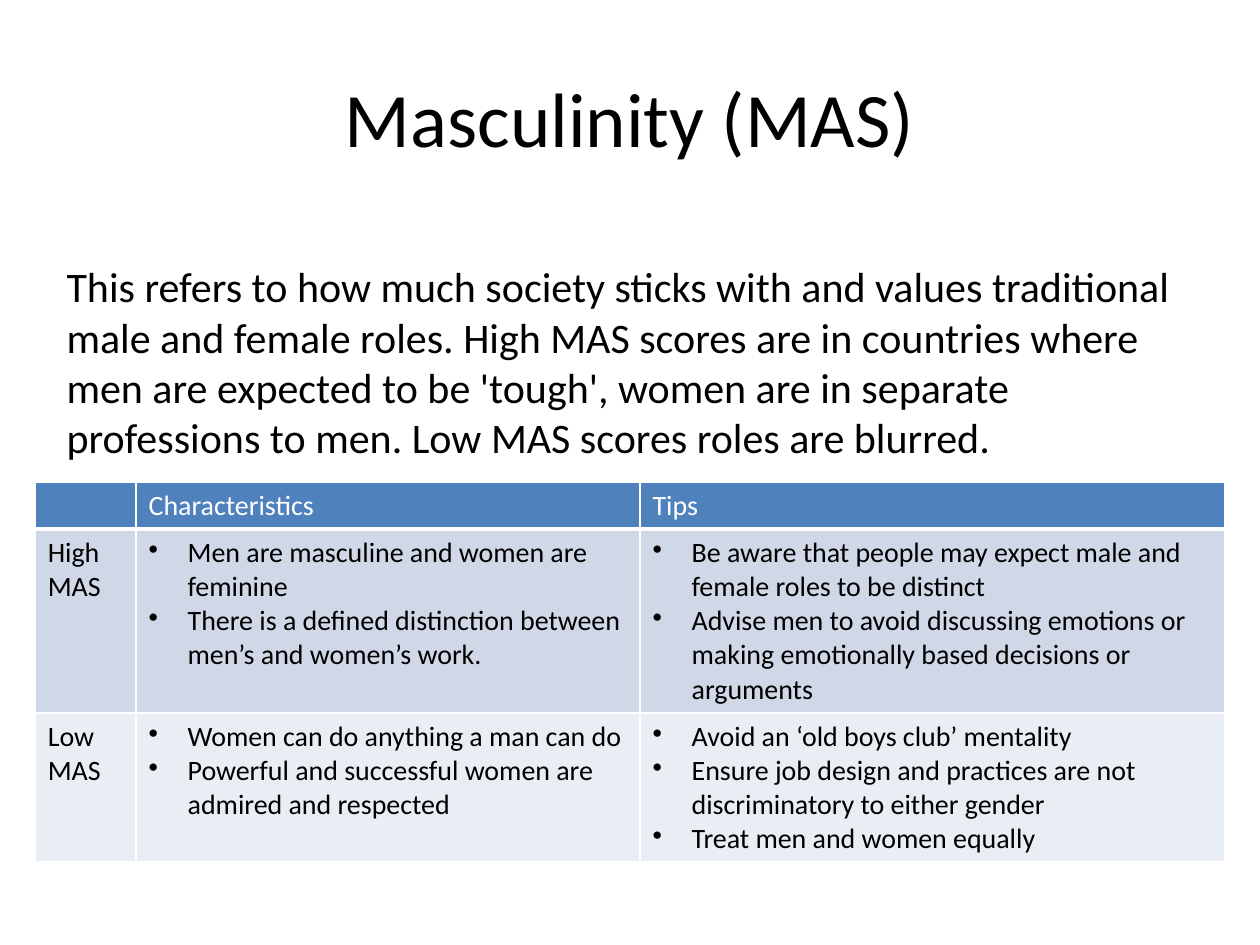
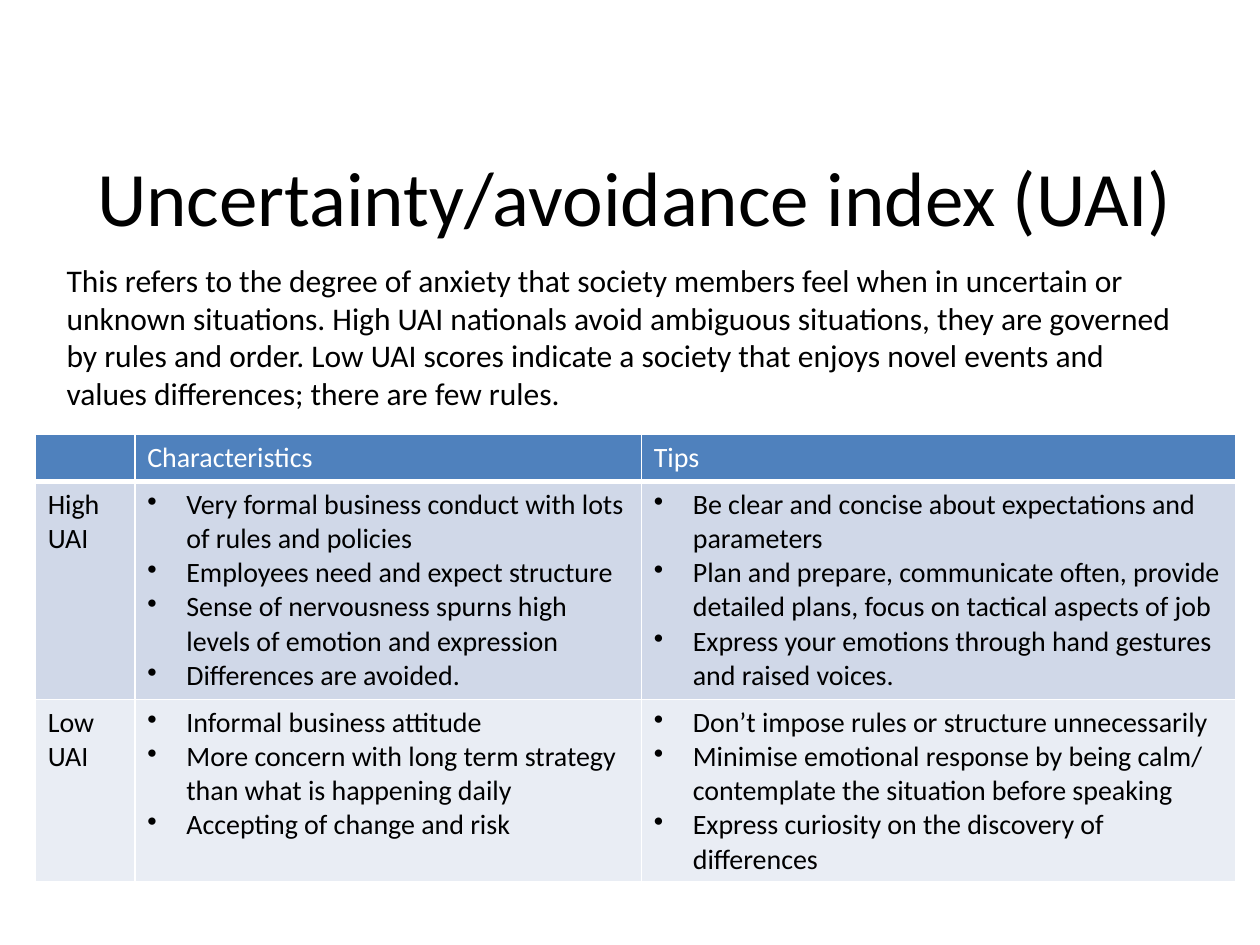
from lxml import etree
from pptx import Presentation, util as u
from pptx.dml.color import RGBColor
from pptx.enum import text
from pptx.oxml import ns

BLACK = RGBColor(0x00, 0x00, 0x00)
WHITE = RGBColor(0xFF, 0xFF, 0xFF)
HEADER_BLUE = RGBColor(0x4F, 0x81, 0xBD)
HIGH_BAND = RGBColor(0xD0, 0xD8, 0xE8)
LOW_BAND = RGBColor(0xE9, 0xED, 0xF4)

WIDTH, HEIGHT = u.Inches(10), u.Inches(7.5)
COLUMNS, ROWS = 100, 75


def across(columns):
    return round(WIDTH * columns / COLUMNS)


def down(rows):
    return round(HEIGHT * rows / ROWS)


class Deck:
    font_name = "Calibri"
    title_size, table_size = 44, 16
    indent = across(3.1)

    def __init__(self):
        self.prs = Presentation()
        self.prs.slide_width, self.prs.slide_height = WIDTH, HEIGHT
        self.slide = None

    def new_slide(self):
        self.slide = self.prs.slides.add_slide(self.prs.slide_layouts[6])

    def style(self, paragraph, size, color=BLACK):
        font = paragraph.font
        font.name, font.size = self.font_name, u.Pt(size)
        font.color.rgb = color

    def text_box(self, left, top, width, height, words, size):
        box = self.slide.shapes.add_textbox(
            across(left), down(top), across(width), down(height))
        frame = box.text_frame
        frame.word_wrap = True
        paragraph = frame.paragraphs[0]
        paragraph.text = words
        self.style(paragraph, size)
        return frame

    def title(self, left, top, words):
        frame = self.text_box(left, top, 90, 12.5, words, self.title_size)
        frame.vertical_anchor = text.MSO_ANCHOR.MIDDLE
        frame.paragraphs[0].alignment = text.PP_ALIGN.CENTER

    def definition(self, height, words, size):
        frame = self.text_box(4.3, 20.2, 90, height, words, size)
        frame.paragraphs[0].space_before = u.Pt(size * 0.2)

    def bullet(self, paragraph):
        properties = paragraph._p.get_or_add_pPr()
        properties.set("marL", str(self.indent))
        properties.set("indent", str(-self.indent))
        mark = etree.Element(ns.qn("a:buChar"), char="•")
        properties.insert_element_before(mark, "a:tabLst", "a:defRPr", "a:extLst")

    def borders(self, cell, bottom):
        """Draw white cell edges; they must precede the fill in the XML."""
        properties = cell._tc.get_or_add_tcPr()
        edges = {"lnL": 1, "lnR": 1, "lnT": 1, "lnB": bottom}
        for position, (edge, points) in enumerate(edges.items()):
            line = etree.Element(ns.qn(f"a:{edge}"), w=str(u.Pt(points)))
            fill = etree.SubElement(line, ns.qn("a:solidFill"))
            etree.SubElement(fill, ns.qn("a:srgbClr"), val=str(WHITE))
            properties.insert(position, line)

    def cell(self, cell, lines, fill, color=BLACK, bulleted=False, bottom=1):
        cell.fill.solid()
        cell.fill.fore_color.rgb = fill
        self.borders(cell, bottom)
        cell.text = "\n".join(lines)
        for paragraph in cell.text_frame.paragraphs:
            self.style(paragraph, self.table_size, color)
            if bulleted:
                self.bullet(paragraph)

    def comparison(self, top, widths, heights, index, high, low):
        """Table of characteristics and tips for high and low scores."""
        table = self.slide.shapes.add_table(
            3, 3, across(2.8), down(top),
            across(sum(widths)), down(sum(heights))).table
        table.first_row = table.horz_banding = False
        for column, width in zip(table.columns, widths):
            column.width = across(width)
        for row, height in zip(table.rows, heights):
            row.height = down(height)

        for column, heading in enumerate(("", "Characteristics", "Tips")):
            self.cell(table.cell(0, column), [heading], HEADER_BLUE, WHITE, bottom=3)
        levels = (("High", high, HIGH_BAND), ("Low", low, LOW_BAND))
        for row, (level, points, band) in enumerate(levels, 1):
            self.cell(table.cell(row, 0), [f"{level} {index}"], band)
            for column, lines in enumerate(points, 1):
                self.cell(table.cell(row, column), lines, band, bulleted=True)


def masculinity(deck):
    deck.new_slide()
    deck.title(5, 3, "Masculinity (MAS)")
    deck.definition(
        41.6,
        "This refers to how much society sticks with and values traditional male "
        "and female roles. High MAS scores are in countries where men are expected "
        "to be 'tough', women are in separate professions to men. Low MAS scores "
        "roles are blurred.", 24)
    deck.comparison(
        38.3, (8, 40, 46.4), (3.7, 14.6, 11.8), "MAS",
        high=(
            ["Men are masculine and women are feminine",
             "There is a defined distinction between men’s and women’s work."],
            ["Be aware that people may expect male and female roles to be distinct",
             "Advise men to avoid discussing emotions or making emotionally based "
             "decisions or arguments"]),
        low=(
            ["Women can do anything a man can do",
             "Powerful and successful women are admired and respected"],
            ["Avoid an ‘old boys club’ mentality",
             "Ensure job design and practices are not discriminatory to either gender",
             "Treat men and women equally"]))


def uncertainty_avoidance(deck):
    deck.new_slide()
    deck.title(5.4, 9.3, "Uncertainty/avoidance index (UAI)")
    deck.definition(
        38.5,
        "This refers to the degree of anxiety that society members feel when in "
        "uncertain or unknown situations. High UAI nationals avoid ambiguous "
        "situations, they are governed by rules and order. Low UAI scores indicate "
        "a society that enjoys novel events and values differences; there are few "
        "rules.", 18)
    deck.comparison(
        34.5, (7.9, 40.2, 47.2), (3.7, 17.3, 14.5), "UAI",
        high=(
            ["Very formal business conduct with lots of rules and policies",
             "Employees need and expect structure",
             "Sense of nervousness spurns high levels of emotion and expression",
             "Differences are avoided."],
            ["Be clear and concise about expectations and parameters",
             "Plan and prepare, communicate often, provide detailed plans, focus on "
             "tactical aspects of job",
             "Express your emotions through hand gestures and raised voices."]),
        low=(
            ["Informal business attitude",
             "More concern with long term strategy than what is happening daily",
             "Accepting of change and risk"],
            ["Don’t impose rules or structure unnecessarily",
             "Minimise emotional response by being calm/ contemplate the situation "
             "before speaking",
             "Express curiosity on the discovery of differences"]))


def main():
    deck = Deck()
    masculinity(deck)
    uncertainty_avoidance(deck)
    deck.prs.save("out.pptx")


if __name__ == "__main__":
    main()
